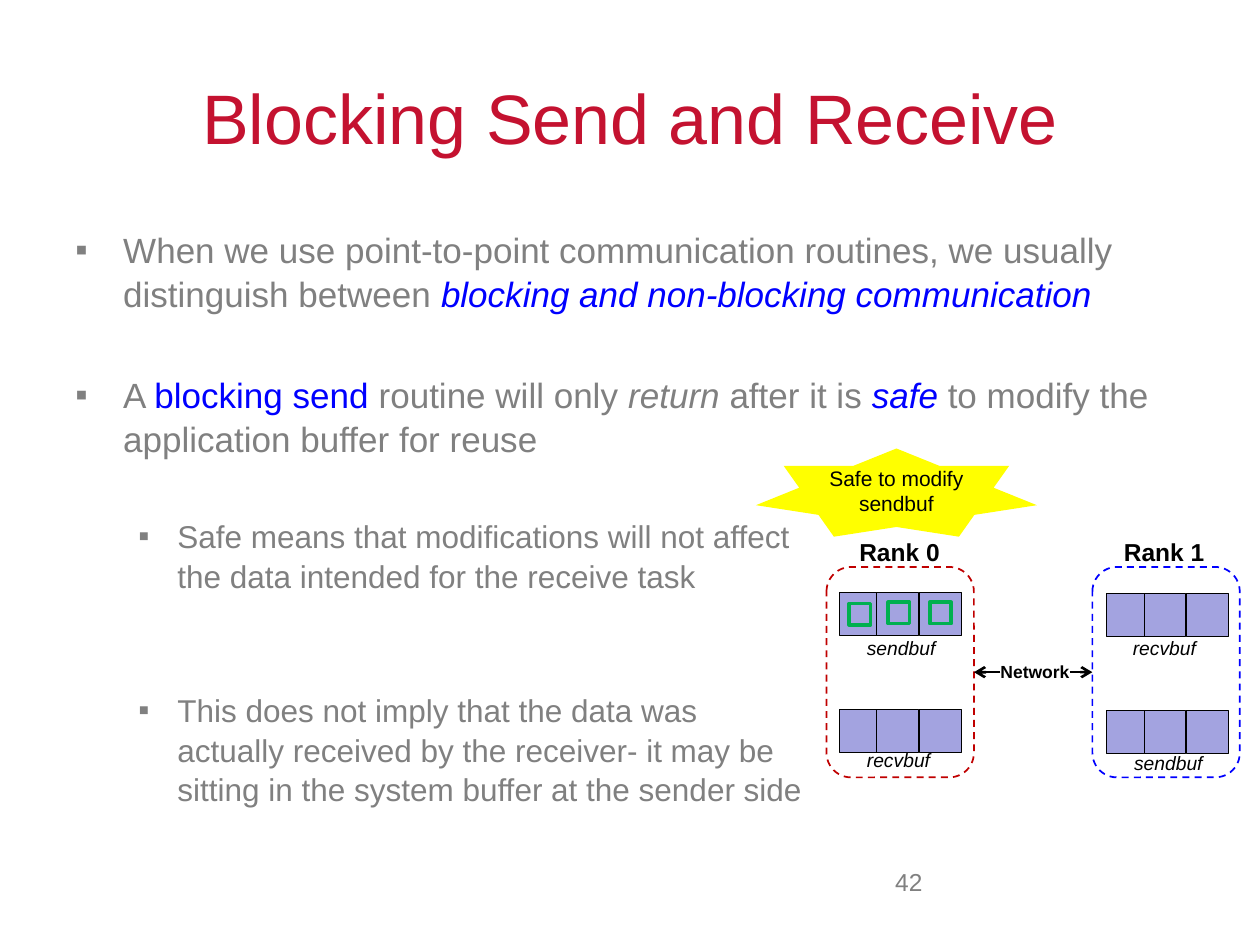
from lxml.etree import SubElement
from pptx import Presentation
from pptx.dml.color import RGBColor
from pptx.enum.dml import MSO_LINE
from pptx.enum.shapes import MSO_CONNECTOR, MSO_SHAPE
from pptx.enum.text import MSO_ANCHOR, MSO_AUTO_SIZE, PP_ALIGN
from pptx.oxml.ns import qn
from pptx.util import Inches, Pt

CRIMSON = RGBColor(0xC4, 0x12, 0x30)
GRAY = RGBColor(0x80, 0x80, 0x80)
BLUE = RGBColor(0x00, 0x00, 0xFF)
RED = RGBColor(0xC0, 0x00, 0x00)
BLACK = RGBColor(0x00, 0x00, 0x00)
LAVENDER = RGBColor(0xA3, 0xA3, 0xE0)
GREEN = RGBColor(0x00, 0xB0, 0x50)
YELLOW = RGBColor(0xFF, 0xFF, 0x00)

prs = Presentation()
prs.slide_width = Inches(10)
prs.slide_height = Inches(7.5)
slide = prs.slides.add_slide(prs.slide_layouts[6])
shapes = slide.shapes


def write(paragraph, text, size=20, color=GRAY, bold=False, italic=False):
    for index, line in enumerate(text.split("\n")):
        if index:
            paragraph.add_line_break()
        run = paragraph.add_run()
        run.text = line
        run.font.name = "Arial"
        run.font.size = Pt(size)
        run.font.color.rgb = color
        run.font.bold = bold
        run.font.italic = italic


def draw(preset, left, top, width, height, fill=None, line=None, weight=1):
    shape = shapes.add_shape(preset, Inches(left), Inches(top), Inches(width), Inches(height))
    shape.shadow.inherit = False
    if fill is None:
        shape.fill.background()
    else:
        shape.fill.solid()
        shape.fill.fore_color.rgb = fill
    if line is None:
        shape.line.fill.background()
    else:
        shape.line.color.rgb = line
        shape.line.width = Pt(weight)
    return shape


title = shapes.add_textbox(Inches(0.5), Inches(0.3), Inches(9), Inches(1.25)).text_frame
title.word_wrap = True
title.vertical_anchor = MSO_ANCHOR.MIDDLE
title.paragraphs[0].alignment = PP_ALIGN.CENTER
write(title.paragraphs[0], "Blocking Send and Receive", size=40, color=CRIMSON)

body = shapes.add_textbox(Inches(0.5), Inches(1.75), Inches(9), Inches(4.95)).text_frame
body.word_wrap = True
emphasis = {"color": BLUE, "italic": True}
points = [
    (0, 0, 20, [
        ("When we use point-to-point communication routines, we usually distinguish between ", {}),
        ("blocking and non-blocking communication", emphasis),
    ]),
    (0, 32, 20, [
        ("A ", {}),
        ("blocking send ", {"color": BLUE}),
        ("routine will only ", {}),
        ("return ", {"italic": True}),
        ("after it is ", {}),
        ("safe", emphasis),
        (" to modify the application buffer for reuse", {}),
    ]),
    (1, 32, 18, [
        ("Safe means that modifications will not affect\nthe data intended for the receive task", {}),
    ]),
    (1, 54, 18, [
        ("This does not imply that the data was\nactually received by the receiver- it may be\n"
         "sitting in the system buffer at the sender side", {}),
    ]),
]
indents = [(0.38, -0.38), (0.81, -0.31)]
for index, (level, gap, size, pieces) in enumerate(points):
    point = body.add_paragraph() if index else body.paragraphs[0]
    point.level = level
    point.line_spacing = 1.05
    point.space_before = Pt(gap)
    properties = point._p.get_or_add_pPr()
    margin, hanging = indents[level]
    properties.set("marL", str(Inches(margin)))
    properties.set("indent", str(Inches(hanging)))
    SubElement(properties, qn("a:buFont"), typeface="Arial")
    SubElement(properties, qn("a:buChar"), char="▪")
    for text, style in pieces:
        write(point, text, size=size, **style)

number = shapes.add_textbox(Inches(6.5), Inches(6.83), Inches(0.92), Inches(0.52)).text_frame
number.word_wrap = True
number.paragraphs[0].alignment = PP_ALIGN.RIGHT
write(number.paragraphs[0], "42", size=14)

for buffer_left, buffer_top in [(6.66, 4.7), (6.66, 5.63), (8.78, 4.71), (8.78, 5.64)]:
    for offset in (0, 0.3, 0.64):
        draw(MSO_SHAPE.RECTANGLE, buffer_left + offset, buffer_top, 0.33, 0.34,
             fill=LAVENDER, line=BLACK, weight=0.5)

ranks = []
for rank_left, rank_color in [(6.56, RED), (8.67, BLUE)]:
    rank = draw(MSO_SHAPE.ROUNDED_RECTANGLE, rank_left, 4.5, 1.17, 1.67, line=rank_color)
    rank.line.dash_style = MSO_LINE.DASH
    ranks.append(rank)

rank_style = {"size": 14, "bold": True}
buffer_style = {"size": 11, "italic": True}
labels = [
    ("Rank 0", 6.82, 4.26, 0.64, 0.24, rank_style),
    ("Rank 1", 8.92, 4.26, 0.64, 0.24, rank_style),
    ("sendbuf", 6.88, 5.05, 0.55, 0.18, buffer_style),
    ("recvbuf", 6.88, 5.94, 0.51, 0.18, buffer_style),
    ("recvbuf", 8.99, 5.05, 0.51, 0.18, buffer_style),
    ("sendbuf", 9, 5.96, 0.55, 0.18, buffer_style),
    ("Network", 7.94, 5.25, 0.55, 0.17, {"size": 10, "bold": True}),
]
for text, left, top, width, height, style in labels:
    label = shapes.add_textbox(Inches(left), Inches(top), Inches(width), Inches(height))
    frame = label.text_frame
    frame.margin_left = frame.margin_right = frame.margin_top = frame.margin_bottom = 0
    frame.word_wrap = False
    frame.auto_size = MSO_AUTO_SIZE.SHAPE_TO_FIT_TEXT
    write(frame.paragraphs[0], text, color=BLACK, **style)
network = label

for mark_left, mark_top in [(6.74, 4.79), (7.05, 4.78), (7.38, 4.78)]:
    draw(MSO_SHAPE.RECTANGLE, mark_left, mark_top, 0.17, 0.17, line=GREEN, weight=2)

callout = draw(MSO_SHAPE.STAR_7_POINT, 6, 3.56, 2.23, 0.7, fill=YELLOW).text_frame
callout.margin_left = callout.margin_right = 0
callout.word_wrap = True
callout.vertical_anchor = MSO_ANCHOR.MIDDLE
callout.paragraphs[0].alignment = PP_ALIGN.CENTER
write(callout.paragraphs[0], "Safe to modify sendbuf", size=12, color=BLACK)

for rank, network_side, rank_side in [(ranks[1], 3, 1), (ranks[0], 1, 3)]:
    link = shapes.add_connector(MSO_CONNECTOR.STRAIGHT, 0, 0, 0, 0)
    link.begin_connect(network, network_side)
    link.end_connect(rank, rank_side)
    link.line.color.rgb = BLACK
    link.line.width = Pt(1.5)
    SubElement(link.line._get_or_add_ln(), qn("a:tailEnd"), type="arrow")
    SubElement(link._element.spPr, qn("a:effectLst"))

prs.save("out.pptx")
